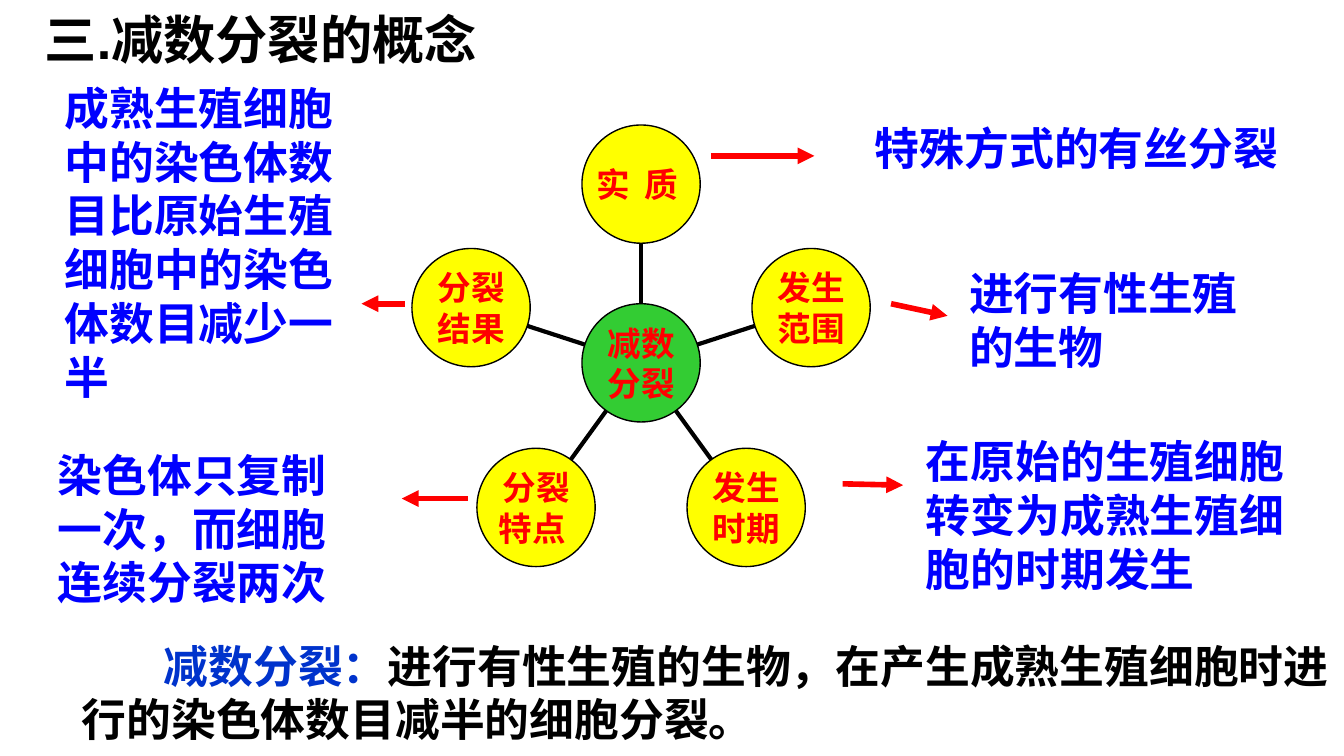
from dataclasses import dataclass
from math import cos, radians, sin

from lxml.etree import SubElement
from pptx import Presentation
from pptx.dml.color import RGBColor
from pptx.enum.shapes import MSO_CONNECTOR as Connector, MSO_SHAPE as Shape
from pptx.enum.text import MSO_ANCHOR as Anchor, MSO_AUTO_SIZE as AutoSize, PP_ALIGN as Align
from pptx.oxml.ns import qn
from pptx.util import Inches, Pt

BLACK = RGBColor(0x00, 0x00, 0x00)
RED = RGBColor(0xFF, 0x00, 0x00)
YELLOW = RGBColor(0xFF, 0xFF, 0x00)
GREEN = RGBColor(0x33, 0xCC, 0x33)
BLUE = RGBColor(0x00, 0x00, 0xFF)
TERM_BLUE = RGBColor(0x00, 0x33, 0xCC)

HUB_X, HUB_Y = 4.77, 2.7
RADIUS = 0.44
RING_RADIUS = 1.33


@dataclass
class Callout:
    text: str
    left: float
    top: float
    width: float
    height: float
    arrow_start: tuple[float, float]
    arrow_end: tuple[float, float]


# Clockwise from the top
TOPICS = ["实  质 ", "发生\n范围", "发生\n时期", "分裂\n特点 ", "分裂\n结果"]

CALLOUTS = [
    Callout("特殊方式的有丝分裂", 6.44, 0.86, 3.21, 0.48, (5.29, 1.16), (6.06, 1.16)),
    Callout("进行有性生殖的生物", 7.14, 1.94, 2.36, 0.88, (6.63, 2.26), (7.05, 2.35)),
    Callout("在原始的生殖细胞转变为成熟生殖细胞的时期发生",
            6.82, 3.19, 2.84, 1.29, (6.27, 3.6), (6.72, 3.61)),
    Callout("染色体只复制一次，而细胞连续分裂两次",
            0.36, 3.29, 2.36, 1.29, (3.48, 3.71), (2.99, 3.71)),
    Callout("成熟生殖细胞中的染色体数目比原始生殖细胞中的染色体数目减少一半",
            0.41, 0.56, 2.39, 2.5, (3.01, 2.26), (2.69, 2.26)),
]


def add_run(paragraph, text: str, *, size: float, color: RGBColor, font: str = "Arial") -> None:
    run = paragraph.add_run()
    run.text = text
    run.font.name = font
    run.font.size = Pt(size)
    run.font.bold = True
    run.font.color.rgb = color


def write_text(frame, text: str, *, size: float, color: RGBColor, align=Align.LEFT,
               anchor=Anchor.TOP, margins=(0.1, 0.05), wrap=True) -> None:
    """Fill a text frame, one paragraph for each line of text."""
    frame.word_wrap = wrap
    frame.auto_size = AutoSize.NONE
    frame.vertical_anchor = anchor
    frame.margin_left = frame.margin_right = Inches(margins[0])
    frame.margin_top = frame.margin_bottom = Inches(margins[1])
    for index, line in enumerate(text.split("\n")):
        paragraph = frame.add_paragraph() if index else frame.paragraphs[0]
        paragraph.alignment = align
        add_run(paragraph, line, size=size, color=color)


def add_line(slide, start: tuple[float, float], end: tuple[float, float], *,
             color: RGBColor, width: float, arrow: bool = False) -> None:
    line = slide.shapes.add_connector(Connector.STRAIGHT, *map(Inches, start + end))
    line.line.color.rgb = color
    line.line.width = Pt(width)
    if arrow:
        SubElement(line.line._get_or_add_ln(), qn("a:tailEnd"), type="triangle")
    SubElement(line._element.spPr, qn("a:effectLst"))


def add_circle(slide, center: tuple[float, float], text: str, fill: RGBColor) -> None:
    circle = slide.shapes.add_shape(
        Shape.OVAL, Inches(center[0] - RADIUS), Inches(center[1] - RADIUS),
        Inches(2 * RADIUS), Inches(2 * RADIUS))
    circle.shadow.inherit = False
    circle.fill.solid()
    circle.fill.fore_color.rgb = fill
    circle.line.color.rgb = BLACK
    circle.line.width = Pt(0.75)
    write_text(circle.text_frame, text, size=18, color=RED, align=Align.CENTER,
               anchor=Anchor.MIDDLE, margins=(0, 0), wrap=False)


def polar(distance: float, angle: float) -> tuple[float, float]:
    """Point at a distance from the hub, angle in degrees clockwise from the top."""
    return (HUB_X + distance * sin(radians(angle)), HUB_Y - distance * cos(radians(angle)))


def add_wheel(slide) -> None:
    for index, topic in enumerate(TOPICS):
        angle = index * 360 / len(TOPICS)
        add_line(slide, polar(RADIUS, angle), polar(RING_RADIUS - RADIUS, angle),
                 color=BLACK, width=2.25)
        add_circle(slide, polar(RING_RADIUS, angle), topic, YELLOW)
    add_circle(slide, (HUB_X, HUB_Y), "减数\n分裂", GREEN)


def add_callout(slide, callout: Callout) -> None:
    box = slide.shapes.add_textbox(Inches(callout.left), Inches(callout.top),
                                   Inches(callout.width), Inches(callout.height))
    write_text(box.text_frame, callout.text, size=24, color=BLUE, margins=(0.07, 0.04))
    add_line(slide, callout.arrow_start, callout.arrow_end, color=RED, width=3, arrow=True)


def add_definition(slide) -> None:
    box = slide.shapes.add_textbox(Inches(0.51), Inches(4.7), Inches(9.49), Inches(0.91))
    box.text_frame.word_wrap = True
    paragraph = box.text_frame.paragraphs[0]
    paragraph._p.get_or_add_pPr().set("indent", str(Inches(0.61)))
    add_run(paragraph, "减数分裂：", size=24, color=TERM_BLUE, font="Calibri")
    add_run(paragraph, "进行有性生殖的生物，在产生成熟生殖细胞时进行的染色体数目减半的细胞分裂。",
            size=24, color=BLACK, font="Calibri")


def main() -> None:
    presentation = Presentation()
    presentation.slide_width = Inches(10)
    presentation.slide_height = Inches(10 * 9 / 16)
    slide = presentation.slides.add_slide(presentation.slide_layouts[5])

    title = slide.shapes.title
    title.left, title.top = Inches(-2.56), Inches(-0.18)
    title.width, title.height = Inches(9), Inches(0.94)
    write_text(title.text_frame, "三.减数分裂的概念", size=28, color=BLACK,
               align=Align.CENTER, anchor=Anchor.MIDDLE)

    add_wheel(slide)
    for callout in CALLOUTS:
        add_callout(slide, callout)
    add_definition(slide)
    presentation.save("out.pptx")


if __name__ == "__main__":
    main()
